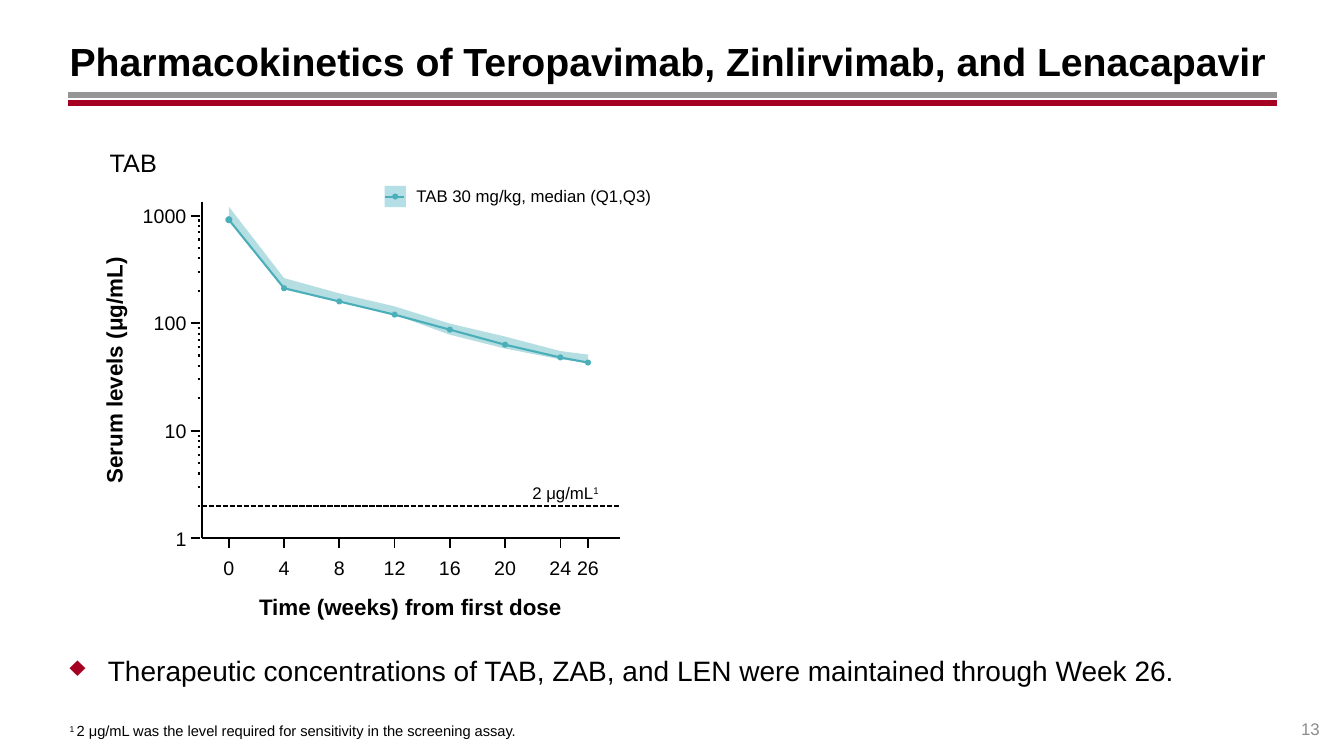
"""Builds the pharmacokinetics slide with its logarithmic serum level plot."""
from dataclasses import dataclass
from math import log10

from lxml.etree import SubElement
from pptx import Presentation
from pptx.dml.color import RGBColor
from pptx.enum.dml import MSO_LINE
from pptx.enum.shapes import MSO_CONNECTOR, MSO_SHAPE
from pptx.enum.text import MSO_ANCHOR as Anchor, MSO_AUTO_SIZE, PP_ALIGN as Align
from pptx.oxml.ns import qn
from pptx.util import Inches, Pt


@dataclass(frozen=True)
class Theme:
    font: str = "Arial"
    ink: str = "000000"
    accent: str = "A50021"
    rule: str = "969696"
    page: str = "8C8C8C"
    median: str = "4BAFB9"
    band: str = "6BBEC6"
    swatch: str = "B5DFE7"
    title: float = 28
    body: float = 20
    panel: float = 18
    axis: float = 16
    tick: float = 14
    small: float = 12
    note: float = 10.5


THEME = Theme()
WEEKS = (0, 4, 8, 12, 16, 20, 24, 26)
MEDIAN = (915, 211, 159, 120, 87, 63, 48, 43)
LOWER = (896, 211, 159, 120, 78, 58, 46, 43)
UPPER = (1210, 262, 189, 143, 99, 75, 55, 51)
DECADES = (1, 10, 100, 1000)
AXIS_LEFT, AXIS_RIGHT, AXIS_TOP, AXIS_BOTTOM = 2, 6.15, 2, 5.34
THRESHOLD = 2


def week_x(week):
    return 2.27 + 0.137 * week


def level_y(level):
    return AXIS_BOTTOM - 1.067 * log10(level)


def curve(levels):
    return [(week_x(week), level_y(level)) for week, level in zip(WEEKS, levels)]


def write(frame, text, size, color=THEME.ink, bold=False, align=Align.LEFT,
          anchor=Anchor.TOP, insets=(0, 0), bullet=None):
    parts = [(text, False)] if isinstance(text, str) else text
    frame.word_wrap = True
    frame.auto_size = MSO_AUTO_SIZE.NONE
    frame.vertical_anchor = anchor
    frame.margin_left = frame.margin_right = Inches(insets[0])
    frame.margin_top = frame.margin_bottom = Inches(insets[1])
    paragraph = frame.paragraphs[0]
    paragraph.alignment = align
    for words, raised in parts:
        run = paragraph.add_run()
        run.text = words
        run.font.name = THEME.font
        run.font.size = Pt(size)
        run.font.bold = bold
        run.font.color.rgb = RGBColor.from_string(color)
        if raised:
            run.font._element.set("baseline", "30000")
    if bullet:
        paragraph.space_before = Pt(9)
        properties = paragraph._p.get_or_add_pPr()
        properties.set("marL", str(Inches(0.38)))
        properties.set("indent", str(Inches(-0.38)))
        bullet_color = SubElement(properties, qn("a:buClr"))
        SubElement(bullet_color, qn("a:srgbClr"), val=THEME.accent)
        SubElement(properties, qn("a:buChar"), char=bullet)


class SlideBuilder:
    def __init__(self, slide, theme):
        self.slide = slide
        self.theme = theme

    def title(self, text, left, top, width, height):
        shape = self.slide.shapes.title
        shape.left, shape.top = Inches(left), Inches(top)
        shape.width, shape.height = Inches(width), Inches(height)
        write(shape.text_frame, text, self.theme.title, bold=True,
              anchor=Anchor.MIDDLE, insets=(0, 0.05))

    def text(self, text, left, top, width, height, size, rotation=0, **style):
        box = self.slide.shapes.add_textbox(
            Inches(left), Inches(top), Inches(width), Inches(height))
        box.rotation = rotation
        write(box.text_frame, text, size, **style)

    def line(self, start, end, width, color=THEME.ink, dash=None):
        connector = self.slide.shapes.add_connector(
            MSO_CONNECTOR.STRAIGHT, *map(Inches, start + end))
        connector.line.color.rgb = RGBColor.from_string(color)
        connector.line.width = Pt(width)
        if dash:
            connector.line.dash_style = dash
        SubElement(connector._element.spPr, qn("a:effectLst"))

    def preset(self, kind, center, size, color):
        left, top = (Inches(value - size / 2) for value in center)
        shape = self.slide.shapes.add_shape(kind, left, top, Inches(size), Inches(size))
        self.fill(shape, color)

    def fill(self, shape, color):
        shape.shadow.inherit = False
        shape.fill.solid()
        shape.fill.fore_color.rgb = RGBColor.from_string(color)
        shape.line.fill.background()

    def outline(self, points, closed):
        corners = [(Inches(x), Inches(y)) for x, y in points]
        builder = self.slide.shapes.build_freeform(*corners[0])
        builder.add_line_segments(corners[1:], close=closed)
        return builder.convert_to_shape()

    def band(self, lower, upper):
        shape = self.outline(upper + lower[::-1], closed=True)
        self.fill(shape, self.theme.band)
        color = shape._element.spPr.find(".//" + qn("a:srgbClr"))
        SubElement(color, qn("a:alpha"), val="50000")

    def polyline(self, points):
        shape = self.outline(points, closed=False)
        shape.shadow.inherit = False
        shape.fill.background()
        shape.line.color.rgb = RGBColor.from_string(self.theme.median)
        shape.line.width = Pt(1.5)

    def marker(self, center, size=0.06):
        self.preset(MSO_SHAPE.OVAL, center, size, self.theme.median)


def draw_axes(builder):
    builder.line((AXIS_LEFT, level_y(THRESHOLD)), (6.14, level_y(THRESHOLD)), 1.25,
                 dash=MSO_LINE.SQUARE_DOT)
    builder.line((AXIS_LEFT, AXIS_TOP), (AXIS_LEFT, AXIS_BOTTOM), 1.25)
    builder.line((AXIS_LEFT, AXIS_BOTTOM), (AXIS_RIGHT, AXIS_BOTTOM), 1.25)
    for decade in DECADES:
        y = level_y(decade)
        builder.line((1.89, y), (1.98, y), 1.5)
        builder.text(str(decade), 1.25, y - 0.12, 0.6, 0.24, THEME.tick,
                     align=Align.RIGHT, anchor=Anchor.MIDDLE)
    for decade in DECADES[:-1]:
        for step in range(2, 10):
            y = level_y(step * decade)
            builder.line((1.96, y), (1.98, y), 1.5)
    for week in WEEKS:
        x = week_x(week)
        builder.line((x, 5.35), (x, 5.44), 1.25)
        builder.text(str(week), x - 0.13, 5.52, 0.26, 0.24, THEME.tick, align=Align.CENTER)
    builder.text("Serum levels (μg/mL)", -0.11, 3.54, 2.47, 0.27, THEME.axis, rotation=270,
                 bold=True, align=Align.CENTER, anchor=Anchor.BOTTOM)
    builder.text("Time (weeks) from first dose", 2.45, 5.88, 3.24, 0.27, THEME.axis,
                 bold=True, align=Align.CENTER)
    builder.text([("2 μg/mL", False), ("1", True)], 5.28, 4.79, 0.8, 0.2, THEME.small)


def draw_series(builder):
    builder.band(curve(LOWER), curve(UPPER))
    builder.polyline(curve(MEDIAN))
    first, *others = curve(MEDIAN)
    builder.marker(first, 0.07)
    for point in others:
        builder.marker(point)


def draw_legend(builder):
    center = (3.92, 1.95)
    builder.preset(MSO_SHAPE.RECTANGLE, center, 0.21, THEME.swatch)
    builder.line((3.82, 1.95), (4.01, 1.95), 1.5, THEME.median)
    builder.marker(center)
    builder.text("TAB 30 mg/kg, median (Q1,Q3)", 4.13, 1.84, 2.8, 0.2, THEME.small)


def main():
    presentation = Presentation()
    presentation.slide_width, presentation.slide_height = Inches(13.33), Inches(7.5)
    builder = SlideBuilder(
        presentation.slides.add_slide(presentation.slide_layouts[5]), THEME)
    for y, color in ((0.94, THEME.rule), (1.02, THEME.accent)):
        builder.line((0.67, y), (12.67, y), 4.25, color)
    builder.title("Pharmacokinetics of Teropavimab, Zinlirvimab, and Lenacapavir",
                  0.69, 0.17, 11.99, 0.86)
    builder.text("TAB", 0.99, 1.48, 5.23, 0.33, THEME.panel,
                 anchor=Anchor.BOTTOM, insets=(0.1, 0.05))
    draw_axes(builder)
    draw_series(builder)
    draw_legend(builder)
    builder.text("Therapeutic concentrations of TAB, ZAB, and LEN were maintained through Week 26.",
                 0.69, 6.43, 11.55, 0.55, THEME.body, insets=(0, 0.05), bullet="♦")
    builder.text([("1 ", True),
                  ("2 μg/mL was the level required for sensitivity in the screening assay.", False)],
                 0.69, 7.16, 11.55, 0.18, THEME.note, anchor=Anchor.BOTTOM)
    builder.text("13", 12.44, 6.93, 0.65, 0.4, THEME.small, color=THEME.page,
                 align=Align.RIGHT, anchor=Anchor.BOTTOM)
    presentation.save("out.pptx")


if __name__ == "__main__":
    main()
